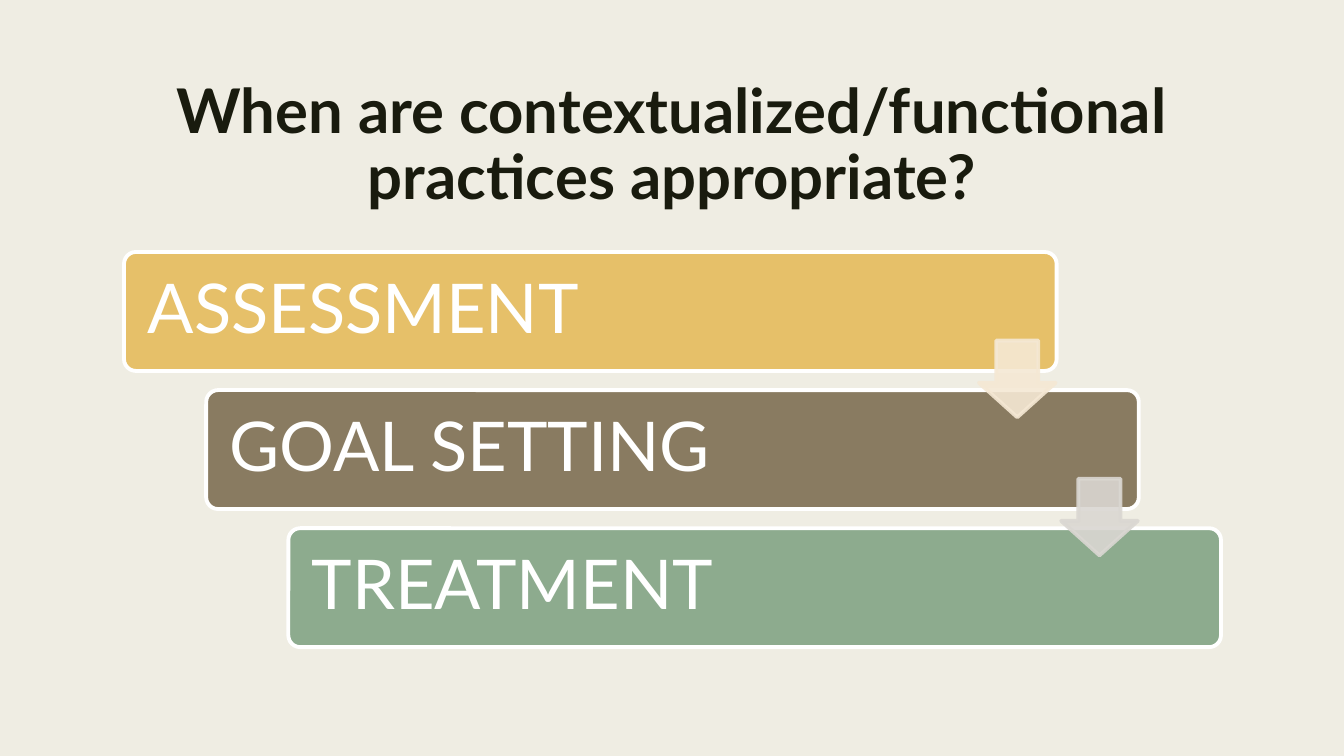
"""Build a slide that steps from assessment through goal setting to treatment."""
import dataclasses

import lxml.etree
import pptx
import pptx.dml.color
import pptx.enum.shapes
import pptx.enum.text
import pptx.oxml.ns
import pptx.util

Inches = pptx.util.Inches
Pt = pptx.util.Pt
RGBColor = pptx.dml.color.RGBColor
Shapes = pptx.enum.shapes.MSO_SHAPE
Anchor = pptx.enum.text.MSO_ANCHOR
Align = pptx.enum.text.PP_ALIGN

CREAM = RGBColor(0xEF, 0xED, 0xE3)
INK = RGBColor(0x19, 0x1B, 0x0E)
WHITE = RGBColor(0xFF, 0xFF, 0xFF)
GOLD = RGBColor(0xE6, 0xC0, 0x69)
BROWN = RGBColor(0x89, 0x7B, 0x61)
GREEN = RGBColor(0x8D, 0xAB, 0x8E)
PALE_GOLD = RGBColor(0xF5, 0xE8, 0xD4)
PALE_GREY = RGBColor(0xDA, 0xD7, 0xD2)

FONT = "Lato"
BAR_LEFT, BAR_TOP, BAR_WIDTH, BAR_HEIGHT = 1.23, 2.5, 9.25, 1.18
STEP_RIGHT, STEP_DOWN = 0.815, 1.37
ARROW_LEFT, ARROW_TOP, ARROW_SIZE = 9.71, 3.38, 0.76


@dataclasses.dataclass
class Stage:
    label: str
    color: RGBColor


@dataclasses.dataclass
class Arrow:
    color: RGBColor


STAGES = [Stage("ASSESSMENT", GOLD), Stage("GOAL SETTING", BROWN), Stage("TREATMENT", GREEN)]
ARROWS = [Arrow(PALE_GOLD), Arrow(PALE_GREY)]


def apply_format(target: object, values: dict) -> None:
    for name, value in values.items():
        setattr(target, name, value)


def write_text(shape, text: str, align, spacing: float, size: int, color: RGBColor, bold: bool) -> None:
    para = shape.text_frame.paragraphs[0]
    apply_format(para, {"alignment": align, "line_spacing": spacing})
    span = para.add_run()
    span.text = text
    apply_format(span.font, {"name": FONT, "size": Pt(size), "bold": bold})
    span.font.color.rgb = color


def add_block(page, preset, left: float, top: float, width: float, height: float,
              fill: RGBColor, line: RGBColor):
    block = page.shapes.add_shape(preset, Inches(left), Inches(top), Inches(width), Inches(height))
    block.shadow.inherit = False
    block.fill.solid()
    block.fill.fore_color.rgb = fill
    block.line.color.rgb = line
    block.line.width = Pt(2.75)
    return block


def add_title(page, text: str) -> None:
    title = page.shapes.title
    apply_format(title, {"left": Inches(0.7), "top": Inches(0.75),
                         "width": Inches(11.93), "height": Inches(1.62)})
    apply_format(title.text_frame, {"word_wrap": True, "vertical_anchor": Anchor.TOP,
                                    "auto_size": pptx.enum.text.MSO_AUTO_SIZE.NONE})
    write_text(title, text, Align.CENTER, 0.89, 44, INK, True)


def add_stage(page, index: int, stage: Stage) -> None:
    bar = add_block(page, Shapes.ROUNDED_RECTANGLE, BAR_LEFT + index * STEP_RIGHT,
                    BAR_TOP + index * STEP_DOWN, BAR_WIDTH, BAR_HEIGHT, stage.color, WHITE)
    bar.adjustments[0] = 0.1
    inset = Inches(0.2)
    apply_format(bar.text_frame, {"margin_left": inset, "margin_right": inset,
                                  "margin_top": inset, "margin_bottom": inset,
                                  "word_wrap": True, "vertical_anchor": Anchor.MIDDLE})
    write_text(bar, stage.label, Align.LEFT, 0.9, 49, WHITE, False)


def add_arrow(page, index: int, arrow: Arrow) -> None:
    block = add_block(page, Shapes.DOWN_ARROW, ARROW_LEFT + index * STEP_RIGHT,
                      ARROW_TOP + index * STEP_DOWN, ARROW_SIZE, ARROW_SIZE, arrow.color, arrow.color)
    block.adjustments[0] = 0.55
    block.adjustments[1] = 0.45
    qualified = pptx.oxml.ns.qn
    for color in block.element.spPr.iter(qualified("a:srgbClr")):
        lxml.etree.SubElement(color, qualified("a:alpha")).set("val", "90000")


def main() -> None:
    deck = pptx.Presentation()
    apply_format(deck, {"slide_width": Inches(13.33), "slide_height": Inches(7.5)})
    page = deck.slides.add_slide(deck.slide_layouts[5])
    page.background.fill.solid()
    page.background.fill.fore_color.rgb = CREAM
    add_title(page, "When are contextualized/functional practices appropriate?")
    for index, stage in enumerate(STAGES):
        add_stage(page, index, stage)
    for index, arrow in enumerate(ARROWS):
        add_arrow(page, index, arrow)
    deck.save("out.pptx")


if __name__ == "__main__":
    main()
